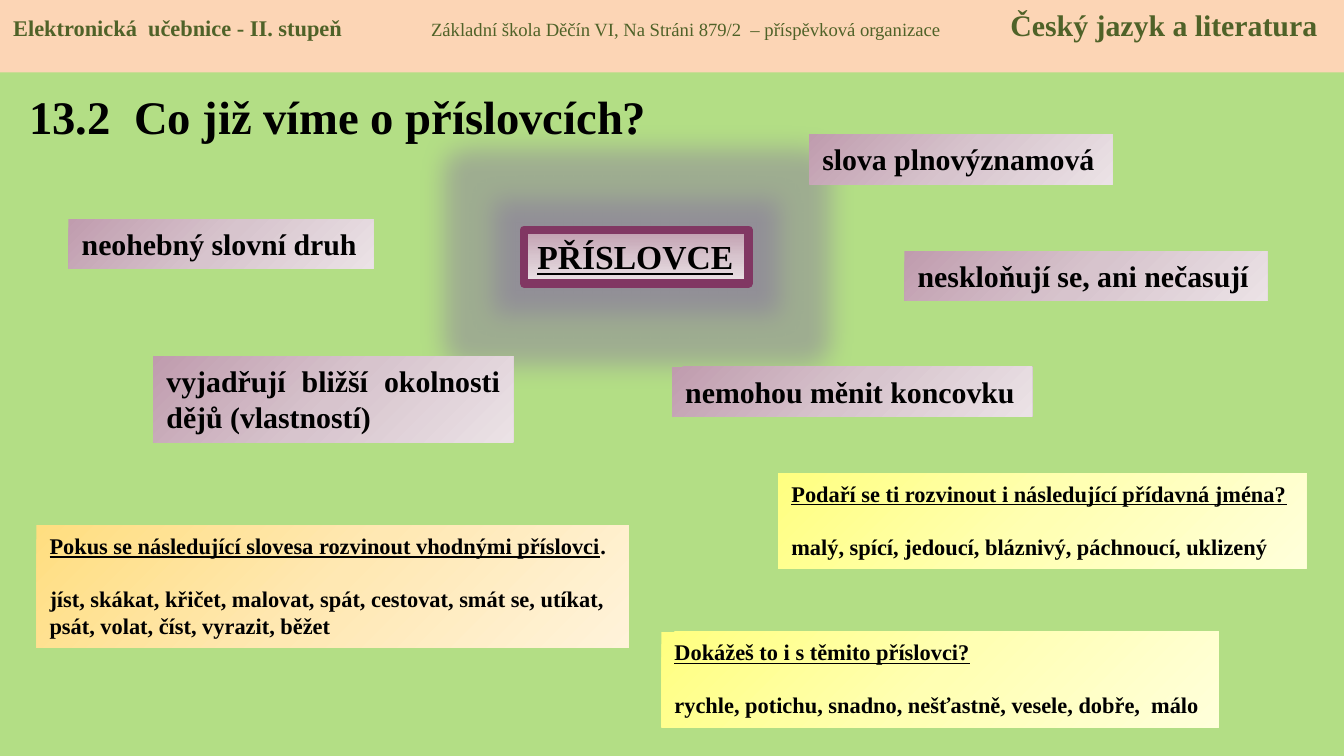
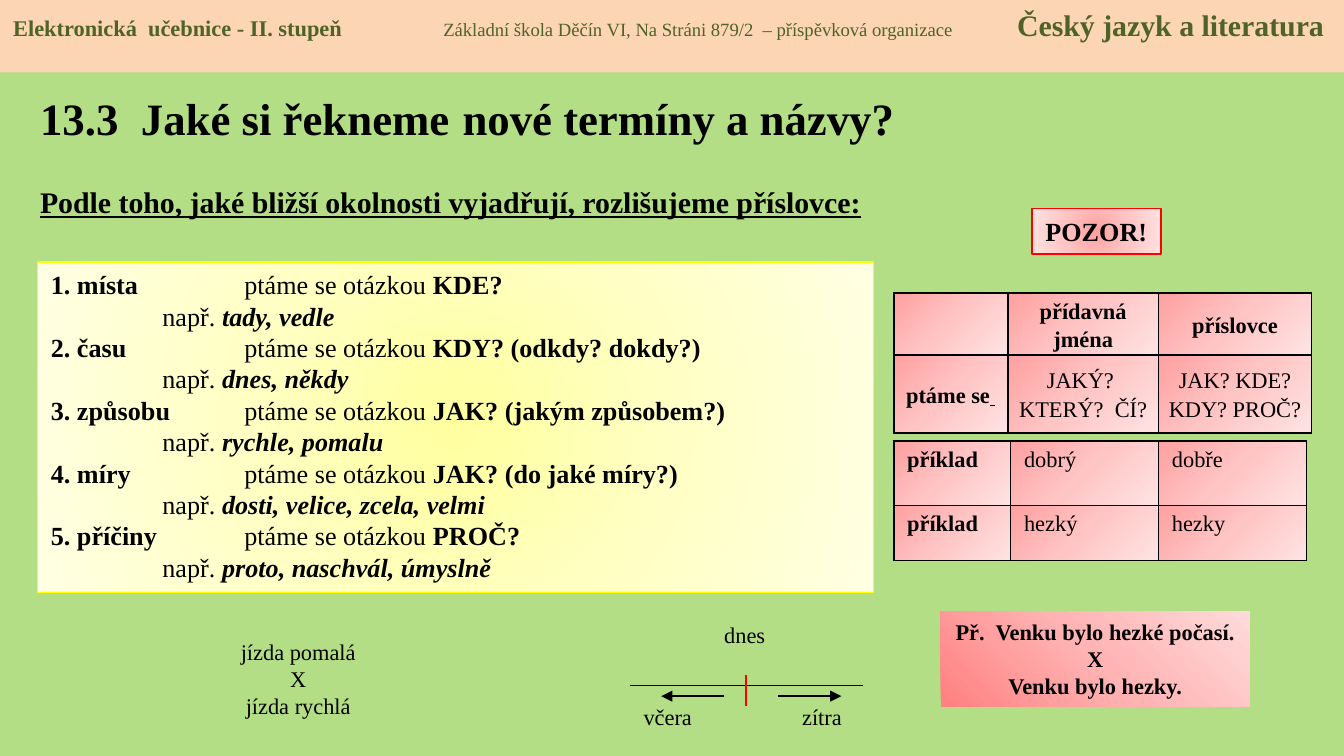
from dataclasses import dataclass

from lxml.etree import SubElement
from pptx import Presentation
from pptx.dml.color import RGBColor
from pptx.enum.shapes import MSO_CONNECTOR, MSO_SHAPE
from pptx.enum.text import MSO_ANCHOR, MSO_AUTO_SIZE, PP_ALIGN
from pptx.oxml.ns import qn
from pptx.util import Inches, Pt


@dataclass(frozen=True)
class Theme:
    """Colours, gradients and type sizes of the lesson."""
    font: str = "Times New Roman"
    meadow: str = "B3DE85"
    band: str = "FCD5B5"
    olive: str = "4F6228"
    ink: str = "000000"
    plum: str = "813763"
    glow: str = "8064A2"
    yellow: str = "FFFF00"
    red: str = "FF0000"
    mauve: tuple = ("C09CAE", "D7C4CD", "EBE2E6")
    orange: tuple = ("FFDE80", "FFE8B3", "FFF3DA")
    lemon: tuple = ("FFFF80", "FFFFB3", "FFFFDA")
    cream: tuple = ("FFFFA0", "FFFFC5", "FFFFE3")
    rose: tuple = ("FFA0A0", "FFC5C5", "FFE3E3")
    coral: tuple = ("FF8080", "FFB3B3", "FFDADA")
    tiny: int = 10
    small: int = 12
    list: int = 14
    fact: int = 16
    key: int = 18
    title: int = 24
    big_title: int = 25
    gap: int = 28


MARKS = {"b": "bold", "i": "italic", "u": "underline"}
CENTER = {"alignment": PP_ALIGN.CENTER}
COLUMNS, ROWS = 100, 56.25


def assign(target, values):
    """Set every named value on the target."""
    for name, value in values.items():
        setattr(target, name, value)


def rgb(code):
    """Turn a hex code into a colour."""
    return RGBColor.from_string(code)


def blend(fill, properties, colors, angle):
    """Fill with three even stops, along an angle or from the centre when it is None."""
    fill.solid()
    gradient = properties.makeelement(qn("a:gradFill"), {"rotWithShape": "1"})
    stops = SubElement(gradient, qn("a:gsLst"))
    for index, color in enumerate(colors):
        stop = SubElement(stops, qn("a:gs"), pos=str(index * 50000))
        SubElement(stop, qn("a:srgbClr"), val=color)
    if angle is None:
        circle = SubElement(gradient, qn("a:path"), {"path": "circle"})
        SubElement(circle, qn("a:fillToRect"), dict.fromkeys("ltrb", "50000"))
    else:
        SubElement(gradient, qn("a:lin"), ang=str(angle * 60000), scaled="0")
    properties.replace(properties.find(qn("a:solidFill")), gradient)


class Lesson:
    """Holds the theme, the deck and the page being filled."""

    def __init__(self, theme):
        self.theme = theme
        self.deck = Presentation()
        assign(self.deck, {"slide_width": Inches(10), "slide_height": Inches(5.625)})
        self.page = None

    def x(self, columns):
        """Convert grid columns to a length."""
        return round(self.deck.slide_width * columns / COLUMNS)

    def y(self, rows):
        """Convert grid rows to a length."""
        return round(self.deck.slide_height * rows / ROWS)

    def place(self, spot):
        """Convert left, top, width and height from the grid."""
        left, top, width, height = spot
        return self.x(left), self.y(top), self.x(width), self.y(height)

    def start_page(self, heading, spot, size, tabs):
        """Add a page with its heading and the school band."""
        theme = self.theme
        self.page = self.deck.slides.add_slide(self.deck.slide_layouts[6])
        self.page.background.fill.solid()
        self.page.background.fill.fore_color.rgb = rgb(theme.meadow)
        self.text(spot, [heading], size, wrap=True, anchor=MSO_ANCHOR.MIDDLE)
        band = self.page.shapes.add_shape(MSO_SHAPE.RECTANGLE, *self.place((0, 0, COLUMNS, 5.4)))
        band.shadow.inherit = False
        band.fill.solid()
        band.fill.fore_color.rgb = rgb(theme.band)
        band.line.fill.background()
        spans = [("Elektronická  učebnice - II. stupeň\t", "b", theme.small),
                 ("Základní škola Děčín VI, Na Stráni 879/2  – příspěvková organizace\t", "", theme.tiny),
                 ("Český jazyk a literatura", "b", theme.fact)]
        self.set_text(band.text_frame, [spans], theme.small, color=theme.olive, tabs=tabs)

    def set_text(self, frame, lines, size, color=None, wrap=True, anchor=MSO_ANCHOR.TOP,
                 form=None, tabs=()):
        """Put lines of (text, marks, size) spans into a frame."""
        assign(frame, {"word_wrap": wrap, "vertical_anchor": anchor})
        for index, line in enumerate(lines):
            para = frame.paragraphs[0] if index == 0 else frame.add_paragraph()
            assign(para, {"alignment": PP_ALIGN.LEFT, **(form or {})})
            for words, marks, *own_size in line:
                span = para.add_run()
                span.text = words
                assign(span.font, {"name": self.theme.font, "size": Pt(own_size[0] if own_size else size)})
                assign(span.font, {name: mark in marks for mark, name in MARKS.items()})
                span.font.color.rgb = rgb(color or self.theme.ink)
            if tabs:
                stops = SubElement(para._p.get_or_add_pPr(), qn("a:tabLst"))
                for stop in tabs:
                    SubElement(stops, qn("a:tab"), pos=str(self.x(stop)), algn="l")

    def text(self, spot, lines, size, wrap=False, **style):
        """Add plain text."""
        box = self.page.shapes.add_textbox(*self.place(spot))
        self.set_text(box.text_frame, lines, size, wrap=wrap, **style)

    def card(self, spot, lines, size, colors, angle=45, line=None, wrap=False, **style):
        """Add a gradient rectangle with text and an optional (colour, width) line."""
        box = self.page.shapes.add_shape(MSO_SHAPE.RECTANGLE, *self.place(spot))
        box.shadow.inherit = False
        blend(box.fill, box._element.spPr, colors, angle)
        if line:
            box.line.color.rgb = rgb(line[0])
            box.line.width = Pt(line[1])
        else:
            box.line.fill.background()
        self.set_text(box.text_frame, lines, size, wrap=wrap, **style)
        box.text_frame.auto_size = MSO_AUTO_SIZE.SHAPE_TO_FIT_TEXT
        return box

    def task(self, spot, question, words, colors, wrap=False):
        """Add a task card: a question and, a line below, its words."""
        box = self.card(spot, [question, [(words, "b")]], self.theme.small, colors, wrap=wrap)
        box.text_frame.paragraphs[1].space_before = Pt(14)

    def halo(self, box, radius):
        """Give a box a soft glow."""
        effects = box._element.spPr.find(qn("a:effectLst"))
        glow = SubElement(effects, qn("a:glow"), rad=str(Pt(radius)))
        color = SubElement(glow, qn("a:srgbClr"), val=self.theme.glow)
        SubElement(color, qn("a:alpha"), val="40000")

    def line(self, start, end, color=None, arrow=False):
        """Add a thin straight line between two grid points."""
        points = [self.x(start[0]), self.y(start[1]), self.x(end[0]), self.y(end[1])]
        link = self.page.shapes.add_connector(MSO_CONNECTOR.STRAIGHT, *points)
        link.line.color.rgb = rgb(color or self.theme.ink)
        link.line.width = Pt(0.75)
        properties = link._element.spPr
        if arrow:
            SubElement(properties.find(qn("a:ln")), qn("a:tailEnd"), type="triangle")
        SubElement(properties, qn("a:effectLst"))

    def table(self, left, top, widths, heights, cells, insets=None, **style):
        """Add a rose table with black borders."""
        spot = self.place((left, top, sum(widths), sum(heights)))
        table = self.page.shapes.add_table(len(heights), len(widths), *spot).table
        assign(table, {"first_row": False, "horz_banding": False})
        for column, width in zip(table.columns, widths):
            column.width = self.x(width)
        for row, height, contents in zip(table.rows, heights, cells):
            row.height = self.y(height)
            for cell, spans in zip(row.cells, contents):
                properties = cell._tc.get_or_add_tcPr()
                blend(cell.fill, properties, self.theme.rose, 45)
                for index, side in enumerate("LRTB"):
                    edge = properties.makeelement(qn(f"a:ln{side}"), {"w": str(Pt(1))})
                    solid = SubElement(edge, qn("a:solidFill"))
                    SubElement(solid, qn("a:srgbClr"), val=self.theme.ink)
                    properties.insert(index, edge)
                if spans:
                    self.set_text(cell.text_frame, [spans], self.theme.small, **style)
                    assign(cell, {"vertical_anchor": style.get("anchor", MSO_ANCHOR.TOP), **(insets or {})})


def build_review(lesson):
    """Build the page on what is known about adverbs."""
    theme = lesson.theme
    lesson.start_page([("13.2  Co již víme o příslovcích?", "b")],
                      (1.2, 5.4, 59.1, 6.5), theme.big_title, (31.1, 74.2))
    topic = lesson.card((39, 17.1, 16.7, 4), [[("PŘÍSLOVCE", "bu")]], theme.key,
                        theme.mauve, 90, (theme.plum, 4.5))
    lesson.halo(topic, 28)
    facts = [("neohebný slovní druh", 5.1, 16.3, 22.7), ("slova plnovýznamová", 60.2, 10, 22.6),
             ("neskloňují se, ani nečasují", 67.3, 18.7, 27), ("nemohou měnit koncovku", 50, 27.3, 26.8)]
    for words, left, top, width in facts:
        lesson.card((left, top, width, 3.7), [[(words, "b")]], theme.fact, theme.mauve)
    lesson.card((11.4, 26.5, 26.8, 6.4), [[("vyjadřují bližší okolnosti dějů (vlastností)", "b")]],
                theme.fact, theme.mauve, wrap=True, form={"alignment": PP_ALIGN.JUSTIFY})
    lesson.task((2.7, 39.1, 44.1, 9.1),
                [("Pokus se následující slovesa rozvinout vhodnými příslovci", "bu"), (".", "b")],
                "jíst, skákat, křičet, malovat, spát, cestovat, smát se, utíkat, "
                "psát, volat, číst, vyrazit, běžet", theme.orange, wrap=True)
    lesson.task((57.9, 35.2, 39.3, 7.1), [("Podaří se ti rozvinout i následující přídavná jména?", "bu")],
                "malý, spící, jedoucí, bláznivý, páchnoucí, uklizený", theme.lemon)
    lesson.task((49.2, 47, 41.5, 7.1), [("Dokážeš to i s těmito příslovci?", "bu")],
                "rychle, potichu, snadno, nešťastně, vesele, dobře,  málo", theme.lemon)


def build_terms(lesson):
    """Build the page on the kinds of adverbs."""
    theme = lesson.theme
    lesson.start_page([("13.3  Jaké si řekneme", "b"), (" ", "b", theme.gap), ("nové termíny a názvy?", "b")],
                      (2, 5.3, 78, 6.5), theme.title, (32, 74.7))
    kinds = [("1. místa", "KDE?", "tady, vedle"), ("2. času", "KDY? (odkdy? dokdy?)", "dnes, někdy"),
             ("3. způsobu", "JAK? (jakým způsobem?)", "rychle, pomalu"),
             ("4. míry", "JAK? (do jaké míry?)", "dosti, velice, zcela, velmi"),
             ("5. příčiny", "PROČ?", "proto, naschvál, úmyslně")]
    lines = []
    for kind, question, examples in kinds:
        lines.append([(f"{kind}\t", "b"), ("ptáme se otázkou ", ""), (question, "b")])
        lines.append([("např. ", ""), (examples, "bi")])
    box = lesson.card((2.8, 19.5, 62.2, 24.6), lines, theme.list, theme.cream, None,
                      (theme.yellow, 0.75), wrap=True, tabs=(14.4,))
    for para in box.text_frame.paragraphs[1::2]:
        para._p.get_or_add_pPr().set("marL", str(lesson.x(8.3)))
    lesson.text((2, 13.2, 64, 3.7),
                [[("Podle toho, jaké bližší okolnosti vyjadřují, rozlišujeme příslovce:", "bu")]], theme.fact)
    lesson.card((76.8, 15.5, 9.6, 3.4), [[("POZOR!", "b")]], theme.list, theme.rose, None, (theme.red, 0.75))
    insets = {"margin_left": Inches(0.07), "margin_right": Inches(0.07), "margin_top": 0, "margin_bottom": 0}
    lesson.table(66.5, 21.8, (8.5, 11.2, 11.4), (4.6, 5.8),
                 [[None, [("přídavná jména", "b")], [("příslovce", "b")]],
                  [[("ptáme se", "b"), (" ", "bu")], [("JAKÝ?  KTERÝ?  ČÍ?", "")], [("JAK? KDE? KDY? PROČ?", "")]]],
                 insets, anchor=MSO_ANCHOR.MIDDLE,
                 form={**CENTER, "line_spacing": 1.15, "space_after": Pt(10)})
    pairs = [("dobrý", "dobře"), ("hezký", "hezky")]
    lesson.table(66.5, 32.8, (8.7, 11, 11), (4.8, 4.1),
                 [[[("příklad", "b")], [(adjective, "")], [(adverb, "")]] for adjective, adverb in pairs])
    lesson.card((70, 45.5, 23, 7.1),
                [[(words, "b")] for words in ("Př.  Venku bylo hezké počasí.", "X", "Venku bylo hezky.")],
                theme.small, theme.coral, 315, form=CENTER)
    lesson.text((16.9, 47, 10.6, 7), [[(words, "")] for words in ("jízda pomalá", "X", "jízda rychlá")],
                theme.small, form=CENTER)
    lesson.line((46.9, 51), (64.2, 51))
    lesson.line((55.5, 50.2), (55.5, 52.5), theme.red)
    for words, left, top, width in [("dnes", 52.9, 45.7, 5.1), ("včera", 46.9, 51.8, 5.6), ("zítra", 58.7, 51.8, 5)]:
        lesson.text((left, top, width, 3), [[(words, "")]], theme.small)
    for start, end in ((53.9, 49.2), (57.9, 62.6)):
        lesson.line((start, 51.8), (end, 51.8), arrow=True)


def main():
    """Build both pages and save the deck."""
    lesson = Lesson(Theme())
    build_review(lesson)
    build_terms(lesson)
    lesson.deck.save("out.pptx")


if __name__ == "__main__":
    main()
